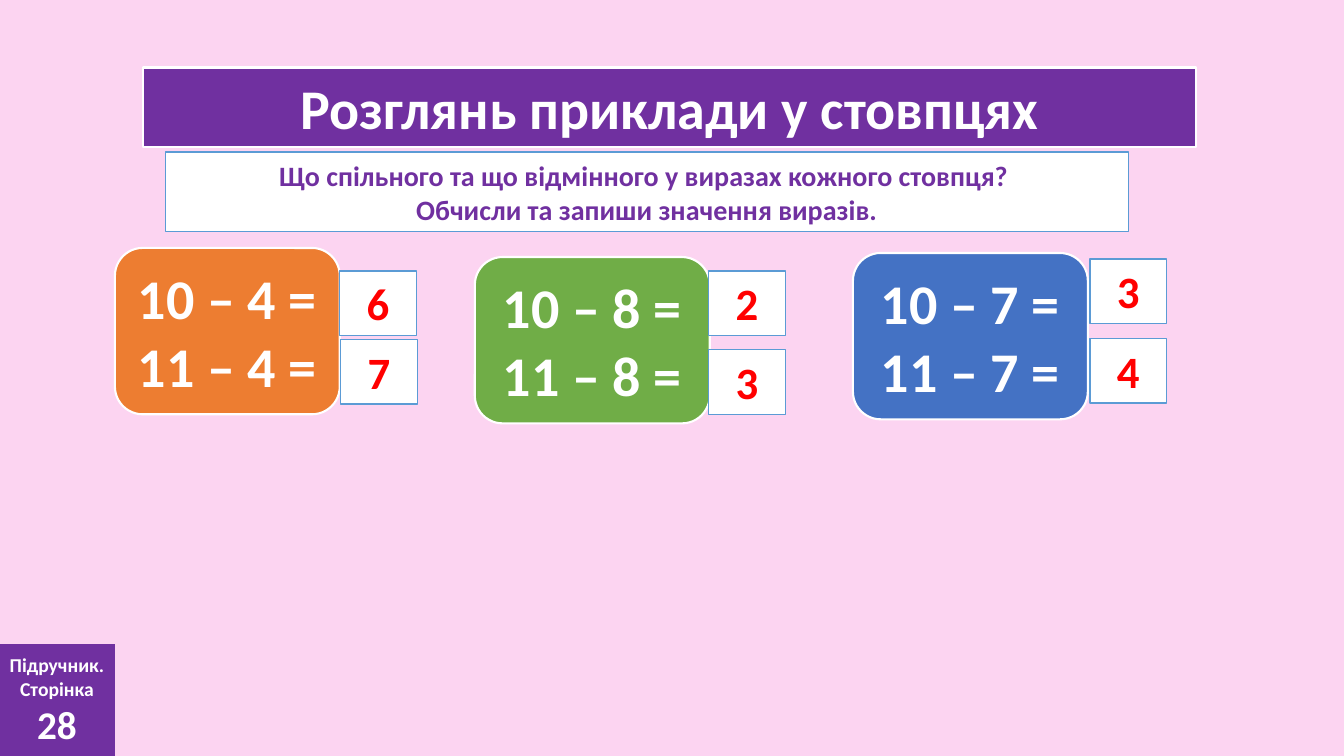
from pptx import Presentation
from pptx.dml.color import RGBColor
from pptx.enum.shapes import MSO_SHAPE as Shape
from pptx.enum.text import MSO_ANCHOR as Anchor, MSO_AUTO_SIZE as AutoSize, PP_ALIGN as Align
from pptx.util import Inches, Pt

PINK = RGBColor(0xFC, 0xD4, 0xF1)
PURPLE = RGBColor(0x70, 0x30, 0xA0)
WHITE = RGBColor(0xFF, 0xFF, 0xFF)
ORANGE = RGBColor(0xED, 0x7D, 0x31)
GREEN = RGBColor(0x70, 0xAD, 0x47)
BLUE = RGBColor(0x44, 0x72, 0xC4)
SKY = RGBColor(0x5B, 0x9B, 0xD5)
RED = RGBColor(0xFF, 0x00, 0x00)

FONT = "Calibri"
ANSWER_WIDTH, ANSWER_HEIGHT = 0.76, 0.64
COLUMN_HEIGHT = 1.65

COLUMNS = [
    (1.14, 2.46, 2.23, ORANGE, ["10 – 4 =", "11 – 4 ="], [(3.37, 2.69, "6"), (3.38, 3.37, "7")]),
    (4.71, 2.55, 2.33, GREEN, ["10 – 8 =", "11 – 8 ="], [(7.03, 2.69, "2"), (7.03, 3.47, "3")]),
    (8.46, 2.51, 2.33, BLUE, ["10 – 7 =", "11 – 7 ="], [(10.81, 2.57, "3"), (10.81, 3.36, "4")]),
]


def add_box(page, place, fill, line=None, line_width=1.5, kind=Shape.RECTANGLE):
    box = page.shapes.add_shape(kind, *[Inches(value) for value in place])
    box.shadow.inherit = False
    box.fill.solid()
    box.fill.fore_color.rgb = fill
    if line is None:
        box.line.fill.background()
    else:
        box.line.color.rgb = line
        box.line.width = Pt(line_width)
    return box


def write_lines(box, lines, color, anchor=Anchor.MIDDLE):
    frame = box.text_frame
    frame.word_wrap = True
    frame.vertical_anchor = anchor
    for index, (text, size) in enumerate(lines):
        para = frame.paragraphs[0] if index == 0 else frame.add_paragraph()
        para.alignment = Align.CENTER
        span = para.add_run()
        span.text = text
        span.font.name = FONT
        span.font.size = Pt(size)
        span.font.bold = True
        span.font.color.rgb = color


def add_title(page):
    box = add_box(page, (1.42, 0.67, 10.44, 0.79), PURPLE, WHITE)
    write_lines(box, [("Розглянь приклади у стовпцях", 40)], WHITE)


def add_task(page):
    box = add_box(page, (1.64, 1.51, 9.55, 0.79), WHITE, SKY, 1)
    lines = [
        ("Що спільного та що відмінного у виразах кожного стовпця? ", 20),
        ("Обчисли та запиши значення виразів.", 20),
    ]
    write_lines(box, lines, PURPLE)


def add_page_label(page):
    box = add_box(page, (-0.01, 6.39, 1.15, 1.11), PURPLE)
    write_lines(box, [("Підручник.", 14), ("Сторінка", 14), ("28", 28)], WHITE)


def add_expressions(page, left, top, width, fill, expressions):
    place = (left, top, width, COLUMN_HEIGHT)
    box = add_box(page, place, fill, WHITE, kind=Shape.ROUNDED_RECTANGLE)
    write_lines(box, [(text, 40) for text in expressions], WHITE)


def add_answer(page, left, top, text):
    box = add_box(page, (left, top, ANSWER_WIDTH, ANSWER_HEIGHT), WHITE, SKY, 1)
    write_lines(box, [(text, 32)], RED, Anchor.TOP)
    box.text_frame.auto_size = AutoSize.SHAPE_TO_FIT_TEXT


def main():
    deck = Presentation()
    deck.slide_width = Inches(13.33)
    deck.slide_height = Inches(7.5)
    page = deck.slides.add_slide(deck.slide_layouts[6])
    page.background.fill.solid()
    page.background.fill.fore_color.rgb = PINK

    add_title(page)
    for left, top, width, fill, expressions, _ in COLUMNS:
        add_expressions(page, left, top, width, fill, expressions)
    add_task(page)
    add_page_label(page)
    for *_, answers in COLUMNS:
        for left, top, text in answers:
            add_answer(page, left, top, text)

    deck.save("out.pptx")


if __name__ == "__main__":
    main()
